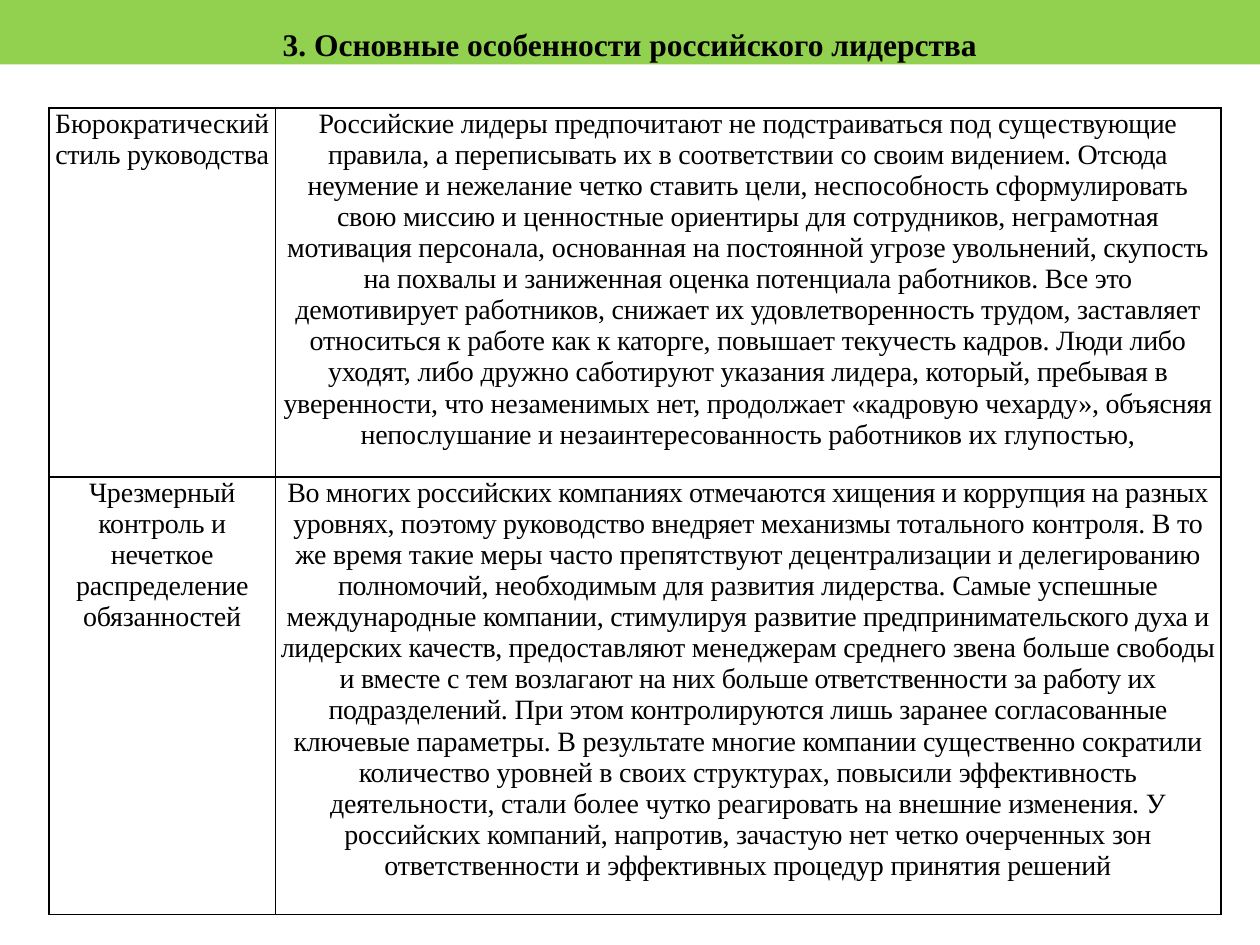
from typing import NamedTuple

import pptx
import pptx.dml.color
import pptx.enum.shapes
import pptx.enum.text
import pptx.oxml
import pptx.oxml.ns
import pptx.util
from pptx.util import Cm

FONT = "Times New Roman"
BLACK = "000000"
GREEN = "92D050"


class Span(NamedTuple):
    text: str
    spacing: float = 0  # points between letters


class Feature(NamedTuple):
    name: list[Span]
    description: list[Span]
    height: float  # centimetres


FEATURES = [
    Feature(
        [Span("Бюрократический "), Span("стиль руководства", -0.1)],
        [Span(
            "Российские лидеры предпочитают не подстраиваться под существующие правила, "
            "а переписывать их в соответствии со своим видением. Отсюда неумение и нежелание "
            "четко ставить цели, неспособность сформулировать свою миссию и ценностные "
            "ориентиры для сотрудников, неграмотная мотивация персонала, основанная на "
            "постоянной угрозе увольнений, скупость на похвалы и заниженная оценка потенциала "
            "работников. Все это демотивирует работников, снижает их удовлетворенность трудом, "
            "заставляет относиться к работе как к каторге, повышает текучесть кадров. Люди либо "
            "уходят, либо дружно саботируют указания лидера, который, пребывая в уверенности, "
            "что незаменимых нет, продолжает «кадровую чехарду», объясняя непослушание и "
            "незаинтересованность работников их глупостью,", -0.1)],
        7.44,
    ),
    Feature(
        [Span("Чрезмерный контроль и нечеткое распределение обязанностей", -0.1)],
        [
            Span("Во многих российских компаниях отмечаются хищения и коррупция на разных "
                 "уровнях, поэтому руководство внедряет механизмы тотального ", -0.2),
            Span("контроля. В то же время такие меры часто препятствуют децентрализации и "
                 "делегированию полномочий, необходимым для развития лидерства. Самые успешные "
                 "международные компании, стимулируя ", -0.1),
            Span("развитие предпринимательского духа и лидерских качеств, предостав", -0.2),
            Span("ляют менеджерам среднего звена больше свободы и вместе с тем ", -0.1),
            Span("возлагают на них больше ответственности за работу их подразделений. ", -0.2),
            Span("При этом контролируются лишь заранее согласованные ключевые параметры. "
                 "В результате многие компании существенно сократили количество уровней в своих "
                 "структурах, повысили эффективность деятельности, стали более чутко реагировать "
                 "на внешние изменения. У российских компаний, напротив, зачастую нет четко "
                 "очерченных зон ответственности и эффективных процедур принятия решений", -0.1),
        ],
        8.82,
    ),
]
COLUMN_WIDTHS = [4.56, 19.06]


def color(value: str) -> pptx.dml.color.RGBColor:
    return pptx.dml.color.RGBColor.from_string(value)


def write_spans(para, spans: list[Span], size: float, bold: bool = False) -> None:
    para.alignment = pptx.enum.text.PP_ALIGN.CENTER
    for span in spans:
        run = para.add_run()
        run.text = span.text
        run.font.name = FONT
        run.font.size = pptx.util.Pt(size)
        run.font.bold = bold
        run.font.color.rgb = color(BLACK)
        if span.spacing:
            run.font._element.set("spc", str(round(span.spacing * 100)))


def add_borders(cell, line_color: str, width: float) -> None:
    """Outline all four sides; the lines must precede the cell's fill."""
    properties = cell._tc.get_or_add_tcPr()
    for index, side in enumerate(("lnL", "lnR", "lnT", "lnB")):
        line = pptx.oxml.parse_xml(
            f'<a:{side} {pptx.oxml.ns.nsdecls("a")} w="{pptx.util.Pt(width)}">'
            f'<a:solidFill><a:srgbClr val="{line_color}"/></a:solidFill></a:{side}>'
        )
        properties.insert(index, line)


def add_title(page, text: str) -> None:
    banner = page.shapes.add_shape(
        pptx.enum.shapes.MSO_SHAPE.RECTANGLE, 0, 0, Cm(25.4), Cm(1.3))
    banner.shadow.inherit = False
    banner.fill.solid()
    banner.fill.fore_color.rgb = color(GREEN)
    banner.line.fill.background()
    banner.text_frame.word_wrap = True
    banner.text_frame.vertical_anchor = pptx.enum.text.MSO_ANCHOR.TOP
    para = banner.text_frame.paragraphs[0]
    para.line_spacing = 1.5
    write_spans(para, [Span(text)], 18, bold=True)


def fill_cell(cell, spans: list[Span]) -> None:
    cell.margin_left = cell.margin_right = Cm(0.1)
    cell.margin_top = cell.margin_bottom = 0
    cell.fill.background()
    add_borders(cell, BLACK, 1)
    write_spans(cell.text_frame.paragraphs[0], spans, 16)


def add_feature_table(page, features: list[Feature]) -> None:
    table = page.shapes.add_table(
        len(features), len(COLUMN_WIDTHS), Cm(0.99), Cm(2.18),
        Cm(sum(COLUMN_WIDTHS)), Cm(sum(feature.height for feature in features)),
    ).table
    table.first_row = table.horz_banding = False
    for column, width in zip(table.columns, COLUMN_WIDTHS):
        column.width = Cm(width)
    for row, feature in zip(table.rows, features):
        row.height = Cm(feature.height)
        for cell, spans in zip(row.cells, (feature.name, feature.description)):
            fill_cell(cell, spans)


def main() -> None:
    deck = pptx.Presentation()
    deck.slide_width, deck.slide_height = Cm(25.4), Cm(19.05)
    page = deck.slides.add_slide(deck.slide_layouts[6])
    add_title(page, "3. Основные особенности российского лидерства")
    add_feature_table(page, FEATURES)
    deck.save("out.pptx")


if __name__ == "__main__":
    main()
